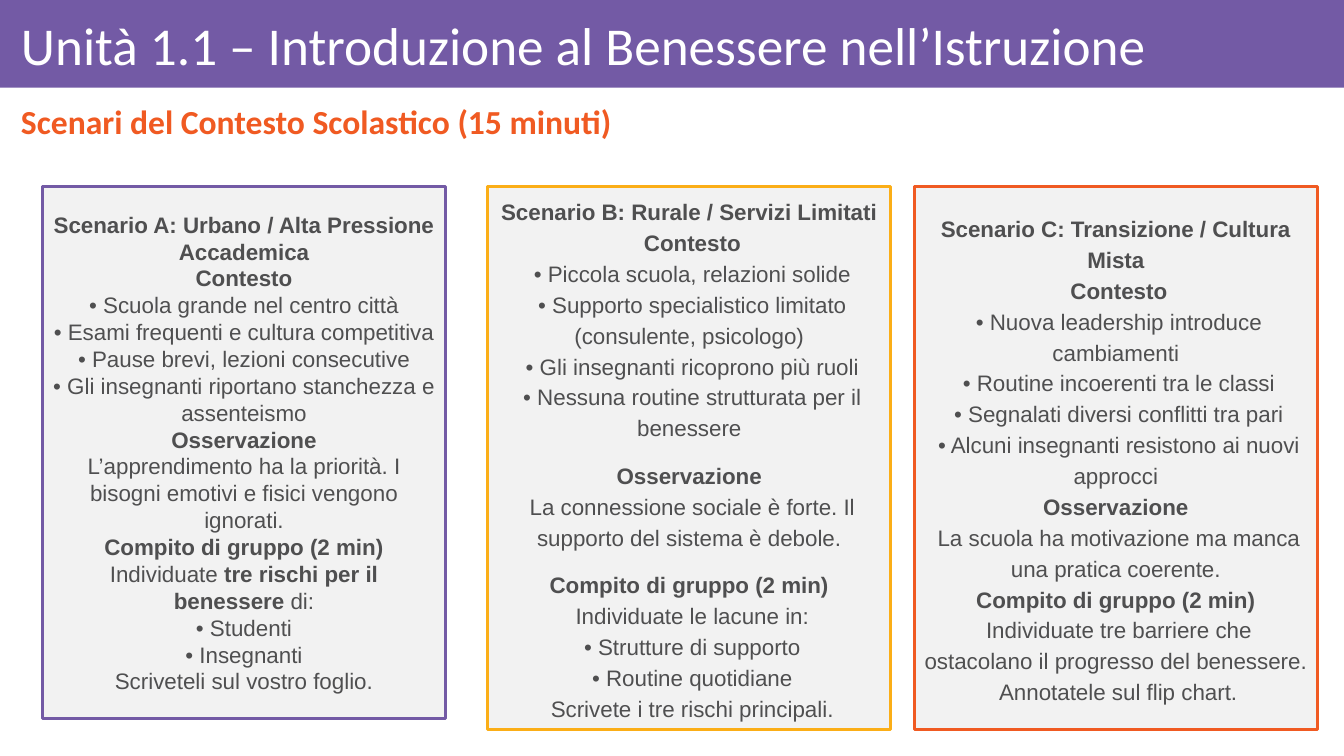
from dataclasses import dataclass
from pptx import Presentation
from pptx.dml.color import RGBColor as Rgb
from pptx.enum.shapes import MSO_SHAPE as Kind
from pptx.enum.text import MSO_ANCHOR as Anchor, PP_ALIGN as Align
from pptx.util import Cm, Pt


@dataclass(frozen=True)
class Theme:
    violet: str = "735AA5"
    amber: str = "FBAE17"
    orange: str = "F05A22"
    pale: str = "F2F2F2"
    ink: str = "4F4F50"
    white: str = "FFFFFF"
    head: str = "Calibri"
    body: str = "Arial"
    title: int = 38
    lead: int = 24
    text: int = 16


THEME = Theme()
LABELS = ("Scenario", "Contesto", "Osservazione", "Compito")

URBAN = [
    "Scenario A: Urbano / Alta Pressione Accademica",
    "Contesto\v• Scuola grande nel centro città",
    "• Esami frequenti e cultura competitiva",
    "• Pause brevi, lezioni consecutive",
    "• Gli insegnanti riportano stanchezza e assenteismo",
    "Osservazione\vL’apprendimento ha la priorità. I bisogni emotivi e fisici vengono ignorati.",
    "Compito di gruppo (2 min)",
    "Individuate |tre rischi per il benessere| di:",
    "• Studenti",
    "• Insegnanti",
    "Scriveteli sul vostro foglio.",
]
RURAL = [
    "Scenario B: Rurale / Servizi Limitati\v Contesto\v • Piccola scuola, relazioni solide"
    "\v • Supporto specialistico limitato (consulente, psicologo)"
    "\v • Gli insegnanti ricoprono più ruoli"
    "\v • Nessuna routine strutturata per il benessere",
    "Osservazione\v La connessione sociale è forte. Il supporto del sistema è debole.",
    "Compito di gruppo (2 min)\v Individuate le lacune in:\v • Strutture di supporto"
    "\v • Routine quotidiane\v Scrivete i tre rischi principali.",
]
MIXED = [
    "Scenario C: Transizione / Cultura Mista\v Contesto\v • Nuova leadership introduce cambiamenti"
    "\v • Routine incoerenti tra le classi\v • Segnalati diversi conflitti tra pari"
    "\v • Alcuni insegnanti resistono ai nuovi approcci",
    "Osservazione\v La scuola ha motivazione ma manca una pratica coerente.",
    "Compito di gruppo (2 min)\v Individuate tre barriere che ostacolano il progresso del benessere."
    "\v Annotatele sul flip chart.",
]


def style(run, face, size, color, bold=False):
    font = run.font
    font.name = face
    font.size = Pt(size)
    font.bold = bold
    font.color.rgb = Rgb.from_string(color)


def add_box(slide, left, top, width, height, fill, edge=None):
    box = slide.shapes.add_shape(Kind.RECTANGLE, Cm(left), Cm(top), Cm(width), Cm(height))
    box.shadow.inherit = False
    box.fill.solid()
    box.fill.fore_color.rgb = Rgb.from_string(fill)
    if edge:
        box.line.color.rgb = Rgb.from_string(edge)
        box.line.width = Pt(2)
    else:
        box.line.fill.background()
    return box


def add_head(slide, text, top, height, size, color, bold, align):
    frame = slide.shapes.add_textbox(Cm(0.28), Cm(top), Cm(33.17), Cm(height)).text_frame
    frame.word_wrap = True
    frame.vertical_anchor = Anchor.MIDDLE
    frame.text = text
    line = frame.paragraphs[0]
    line.alignment = align
    line.line_spacing = 0.9
    style(line.runs[0], THEME.head, size, color, bold)


def add_card(slide, left, height, edge, parts, pitch=None, before=0, after=0):
    frame = add_box(slide, left, 4.7, 10.16, height, THEME.pale, edge).text_frame
    frame.word_wrap = True
    frame.vertical_anchor = Anchor.MIDDLE
    for index, part in enumerate(parts):
        para = frame.add_paragraph() if index else frame.paragraphs[0]
        para.alignment = Align.CENTER
        para.line_spacing = pitch
        para.space_before = Pt(before)
        para.space_after = Pt(after if part is parts[-1] else 0)
        para.text, *rest = part.split("|")
        for piece in rest:
            para.add_run().text = piece
        for order, run in enumerate(para.runs):
            strong = run.text.strip().startswith(LABELS) or (rest and order % 2 == 1)
            style(run, THEME.body, THEME.text, THEME.ink, bool(strong))


def main():
    deck = Presentation()
    deck.slide_width, deck.slide_height = Cm(33.87), Cm(19.05)
    slide = deck.slides.add_slide(deck.slide_layouts[6])
    add_box(slide, 0, 0, 33.87, 2.21, THEME.violet)
    add_head(slide, "Unità 1.1 – Introduzione al Benessere nell’Istruzione",
             0.23, 1.98, THEME.title, THEME.white, False, Align.LEFT)
    add_head(slide, "Scenari del Contesto Scolastico (15 minuti)",
             2.36, 1.52, THEME.lead, THEME.orange, True, Align.JUSTIFY)
    add_card(slide, 1.07, 13.41, THEME.violet, URBAN)
    add_card(slide, 12.29, 13.69, THEME.amber, RURAL, 1.15, 12, 12)
    add_card(slide, 23.04, 13.69, THEME.orange, MIXED, 1.15)
    deck.save("out.pptx")


if __name__ == "__main__":
    main()
